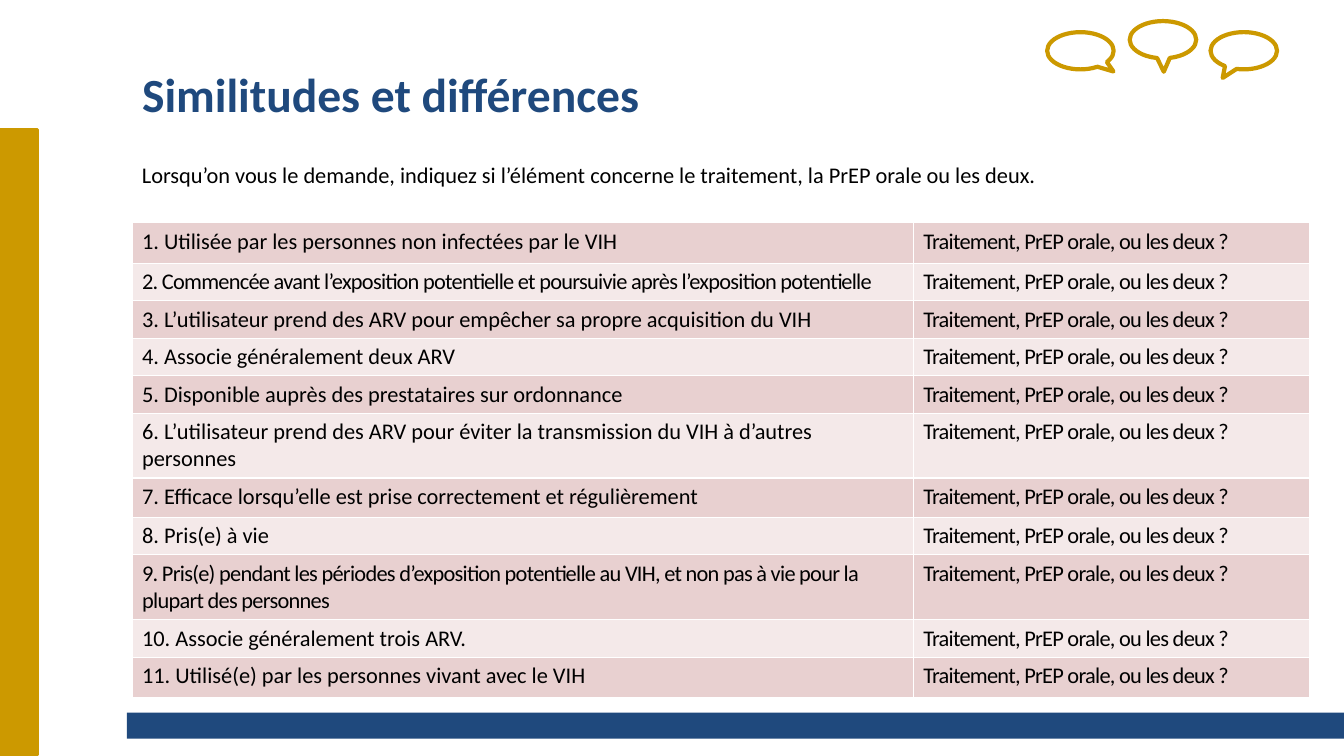
"""Builds the slide comparing HIV treatment and oral PrEP."""
from lxml import etree
from pptx import Presentation
from pptx.dml.color import RGBColor
from pptx.enum.shapes import MSO_SHAPE
from pptx.enum.text import MSO_ANCHOR, PP_ALIGN
from pptx.oxml.ns import qn
from pptx.util import Pt

RECT = MSO_SHAPE.RECTANGLE
CALLOUT = MSO_SHAPE.OVAL_CALLOUT
MIDDLE = MSO_ANCHOR.MIDDLE
LEFT = PP_ALIGN.LEFT

BLUE = RGBColor(0x1F, 0x49, 0x7D)
GOLD = RGBColor(0xCC, 0x99, 0x00)
BLACK = RGBColor(0, 0, 0)
BANDS = (RGBColor(0xE8, 0xD0, 0xD0), RGBColor(0xF4, 0xE9, 0xE9))

FONT = "Calibri"
MARGIN = 94.3
ROW = 26.7
TWO_LINES = 46.2
QUESTION = "Traitement, PrEP orale, ou les deux ?"
INTRO = ("Lorsqu’on vous le demande, indiquez si l’élément concerne "
         "le traitement, la PrEP orale ou les deux.")

STATEMENTS = [
    ("Utilisée par les personnes non infectées par le VIH", 28.8),
    ("Commencée avant l’exposition potentielle et poursuivie après "
     "l’exposition potentielle", ROW),
    ("L’utilisateur prend des ARV pour empêcher sa propre acquisition du VIH", ROW),
    ("Associe généralement deux ARV", ROW),
    ("Disponible auprès des prestataires sur ordonnance", ROW),
    ("L’utilisateur prend des ARV pour éviter la transmission du VIH à "
     "d’autres personnes", TWO_LINES),
    ("Efficace lorsqu’elle est prise correctement et régulièrement", 28),
    ("Pris(e) à vie", ROW),
    ("Pris(e) pendant les périodes d’exposition potentielle au VIH, et non "
     "pas à vie pour la plupart des personnes", TWO_LINES),
    ("Associe généralement trois ARV.", ROW),
    ("Utilisé(e) par les personnes vivant avec le VIH", 28.8),
]
CONDENSED = {2, 9}
CALLOUTS = [
    (748, 23, 0.497, 0.557),
    (807, 15.1, 0.012, 0.861),
    (864.7, 23, -0.317, 0.731),
]


def write(tf, text, size, color, bold=False, condensed=False):
    p = tf.paragraphs[0]
    r = p.add_run()
    r.text = text
    p.alignment = LEFT
    p.font.name, p.font.size, p.font.bold = FONT, Pt(size), bold
    p.font.color.rgb = color
    if condensed:
        r.font._element.set("spc", "-50")


def add_bar(s, left, top, width, height, color):
    sp = s.shapes.add_shape(RECT, Pt(left), Pt(top), Pt(width), Pt(height))
    sp.shadow.inherit = False
    sp.fill.solid()
    sp.fill.fore_color.rgb = color
    sp.line.fill.background()
    return sp


def add_callout(s, left, top, tip_x, tip_y):
    sp = s.shapes.add_shape(CALLOUT, Pt(left), Pt(top), Pt(47.5), Pt(26.6))
    sp.adjustments[0], sp.adjustments[1] = tip_x, tip_y
    sp.shadow.inherit = False
    sp.fill.background()
    sp.line.color.rgb = GOLD
    sp.line.width = Pt(3)


def add_title(s, text):
    sp = s.shapes.title
    sp.left, sp.top = Pt(MARGIN), Pt(21.6)
    sp.width, sp.height = Pt(817.2), Pt(90)
    sp.text_frame.vertical_anchor = MIDDLE
    write(sp.text_frame, text, 34, BLUE, bold=True)


def add_intro(s, text):
    sp = s.shapes.add_textbox(Pt(MARGIN), Pt(111.6), Pt(657.4), Pt(26.6))
    sp.text_frame.word_wrap = False
    write(sp.text_frame, text, 16, BLACK)


def add_borders(cell):
    tcPr = cell._tc.get_or_add_tcPr()
    for side in ("a:lnL", "a:lnR", "a:lnT", "a:lnB"):
        ln = etree.SubElement(tcPr, qn(side), w=str(Pt(1)))
        fill = etree.SubElement(ln, qn("a:solidFill"))
        etree.SubElement(fill, qn("a:srgbClr"), val="FFFFFF")


def fill_cell(cell, text, band, condensed):
    add_borders(cell)
    cell.fill.solid()
    cell.fill.fore_color.rgb = band
    write(cell.text_frame, text, 16, BLACK, condensed=condensed)


def add_statements(s):
    height = sum(h for _, h in STATEMENTS)
    table = s.shapes.add_table(len(STATEMENTS), 2, Pt(MARGIN), Pt(159.2),
                               Pt(841), Pt(height)).table
    table.first_row = table.horz_banding = False
    table.columns[0].width, table.columns[1].width = Pt(558), Pt(283)
    for number, (text, height) in enumerate(STATEMENTS, 1):
        i = number - 1
        table.rows[i].height = Pt(height)
        band = BANDS[i % 2]
        fill_cell(table.cell(i, 0), f"{number}. {text}", band, number in CONDENSED)
        fill_cell(table.cell(i, 1), QUESTION, band, True)


def main():
    prs = Presentation()
    prs.slide_width, prs.slide_height = Pt(960), Pt(540)
    s = prs.slides.add_slide(prs.slide_layouts[5])
    add_bar(s, 90.7, 509, 869.3, 18.7, BLUE)
    side = add_bar(s, 0, 92.2, 26.6, 447.1, GOLD)
    side.line.color.rgb = GOLD
    side.line.width = Pt(2)
    for callout in CALLOUTS:
        add_callout(s, *callout)
    add_title(s, "Similitudes et différences")
    add_statements(s)
    add_intro(s, INTRO)
    prs.save("out.pptx")


if __name__ == "__main__":
    main()
